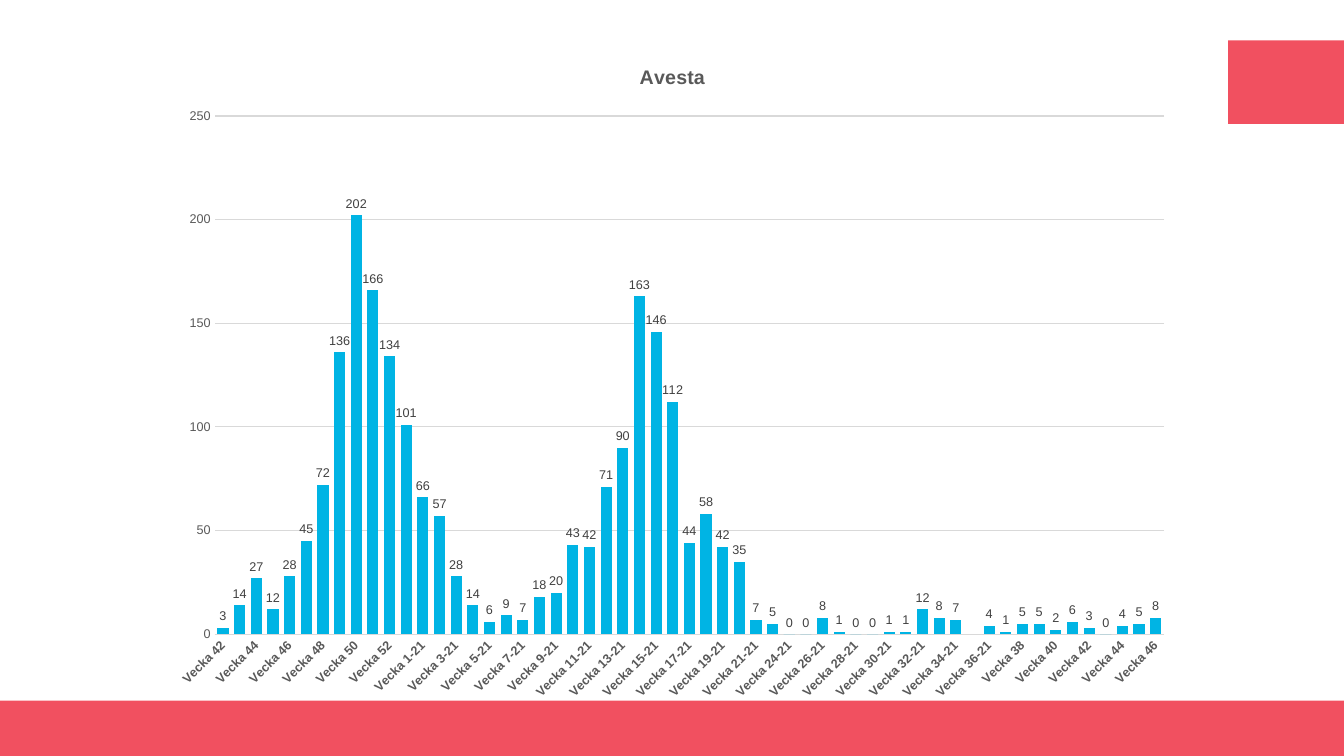
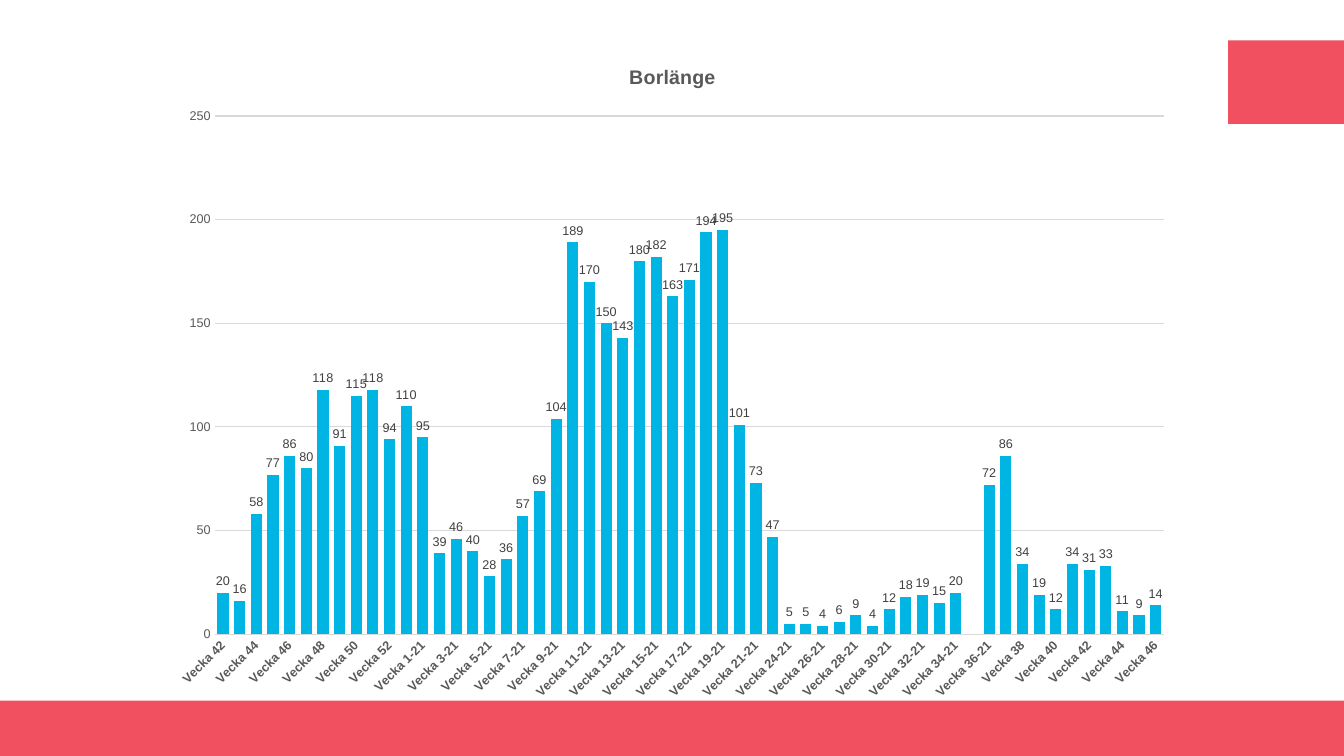
from dataclasses import dataclass

from lxml import etree
from pptx import Presentation
from pptx.chart.data import CategoryChartData
from pptx.dml.color import RGBColor
from pptx.enum.chart import XL_CHART_TYPE as ChartType
from pptx.enum.chart import XL_LABEL_POSITION as LabelPosition
from pptx.enum.chart import XL_TICK_MARK as TickMark
from pptx.enum.shapes import MSO_SHAPE as Preset
from pptx.oxml import parse_xml
from pptx.oxml.ns import nsdecls, qn
from pptx.util import Inches, Pt


@dataclass(frozen=True)
class Theme:
    font: str = "Arial"
    band: str = "F15060"
    bar: str = "00B4E4"
    rule: str = "D9D9D9"
    muted: str = "595959"
    value: str = "404040"
    title_size: float = 14
    base_size: float = 10
    label_size: float = 9


WEEKS = (
    [f"Vecka {week}" for week in range(42, 54)]
    + [f"Vecka {week}-21" for week in range(1, 37) if week != 23]
    + [f"Vecka {week}" for week in range(37, 47)]
)

CASES = {
    "Avesta": [
        3, 14, 27, 12, 28, 45, 72, 136, 202, 166, 134, 101,
        66, 57, 28, 14, 6, 9, 7, 18, 20, 43, 42, 71, 90, 163, 146, 112,
        44, 58, 42, 35, 7, 5, 0, 0, 8, 1, 0, 0, 1, 1, 12, 8, 7, None, 4,
        1, 5, 5, 2, 6, 3, 0, 4, 5, 8,
    ],
    "Borlänge": [
        20, 16, 58, 77, 86, 80, 118, 91, 115, 118, 94, 110,
        95, 39, 46, 40, 28, 36, 57, 69, 104, 189, 170, 150, 143, 180, 182, 163,
        171, 194, 195, 101, 73, 47, 5, 5, 4, 6, 9, 4, 12, 18, 19, 15, 20, None, 72,
        86, 34, 19, 12, 34, 31, 33, 11, 9, 14,
    ],
}


def style_font(font, theme, size, color, bold=False):
    font.name = theme.font
    font.size = Pt(size)
    font.bold = bold
    font.color.rgb = RGBColor.from_string(color)


def write_text(frame, text, **style):
    frame.text = text
    style_font(frame.paragraphs[0].runs[0].font, **style)


def style_line(line, color, width=0.75):
    line.color.rgb = RGBColor.from_string(color)
    line.width = Pt(width)


def manual_layout(target, **fractions):
    """Place a chart part by fractions of the chart's size."""
    for old in target.findall(qn("c:layout")):
        target.remove(old)
    layout = parse_xml(f"<c:layout {nsdecls('c')}><c:manualLayout/></c:layout>")
    for tag, value in fractions.items():
        etree.SubElement(layout[0], qn(f"c:{tag}")).set("val", str(value))
    return layout


class Deck:
    def __init__(self, theme):
        self.theme = theme
        self.prs = Presentation()
        self.prs.slide_width = Inches(13.33)
        self.prs.slide_height = Inches(7.5)
        self.layout = self.prs.slide_layouts[6]
        self.slide = None

    def add_slide(self):
        self.slide = self.prs.slides.add_slide(self.layout)

    def layout_band(self, left, top, width, height):
        """Draw a band and move it to the layout that all slides share."""
        band = self.slide.shapes.add_shape(
            Preset.RECTANGLE, Inches(left), Inches(top), Inches(width), Inches(height)
        )
        band.shadow.inherit = False
        band.fill.solid()
        band.fill.fore_color.rgb = RGBColor.from_string(self.theme.band)
        band.line.fill.background()
        self.layout.shapes.element.append(band.element)

    def weekly_chart(self, town, cases):
        theme = self.theme
        data = CategoryChartData()
        data.categories = WEEKS
        data.add_series("Series 1", cases)
        chart = self.slide.shapes.add_chart(
            ChartType.COLUMN_CLUSTERED,
            Inches(1.58), Inches(0.42), Inches(10.18), Inches(6.65), data,
        ).chart
        style_font(chart.font, theme, theme.base_size, "000000")
        chart.has_legend = False
        chart.has_title = True
        write_text(chart.chart_title.text_frame, town, theme=theme,
                   size=theme.title_size, color=theme.muted, bold=True)
        self.style_columns(chart.plots[0])
        self.style_axes(chart)
        self.place_parts(chart)

    def style_columns(self, plot):
        theme = self.theme
        plot.gap_width = 50
        plot.overlap = -27
        plot.vary_by_categories = False
        bars = plot.series[0]
        bars.invert_if_negative = False
        bars.format.fill.solid()
        bars.format.fill.fore_color.rgb = RGBColor.from_string(theme.bar)
        plot.has_data_labels = True
        labels = plot.data_labels
        labels.show_value = True
        labels.position = LabelPosition.OUTSIDE_END
        style_font(labels.font, theme, theme.label_size, theme.value)

    def style_axes(self, chart):
        theme = self.theme
        weeks, counts = chart.category_axis, chart.value_axis
        for axis in (weeks, counts):
            axis.major_tick_mark = axis.minor_tick_mark = TickMark.NONE
            style_font(axis.tick_labels.font, theme, theme.label_size,
                       theme.muted, bold=axis is weeks)
        style_line(weeks.format.line, theme.rule)
        counts.format.line.fill.background()
        counts.minimum_scale, counts.maximum_scale, counts.major_unit = 0, 250, 50
        counts.has_major_gridlines = True
        style_line(counts.major_gridlines.format.line, theme.rule)

    def place_parts(self, chart):
        """Slant the week labels, fix the plot area and clear the background."""
        space = chart.element
        slant = space.xpath("c:chart/c:plotArea/c:catAx/c:txPr/a:bodyPr")[0]
        slant.set("rot", "-2700000")
        slant.set("vert", "horz")
        plot_area = space.xpath("c:chart/c:plotArea")[0]
        plot_area.insert(0, manual_layout(
            plot_area, layoutTarget="inner", xMode="edge", yMode="edge",
            x=0.054, y=0.11, w=0.925, h=0.773,
        ))
        space.xpath("c:txPr")[0].addprevious(parse_xml(
            f"<c:spPr {nsdecls('c', 'a')}><a:noFill/><a:ln><a:noFill/></a:ln></c:spPr>"
        ))


def main():
    deck = Deck(Theme())
    for town, cases in CASES.items():
        deck.add_slide()
        if len(deck.prs.slides) == 1:
            deck.layout_band(0, 6.95, 13.33, 0.55)
            deck.layout_band(12.18, 0.4, 1.15, 0.83)
        deck.weekly_chart(town, cases)
    deck.prs.save("out.pptx")


if __name__ == "__main__":
    main()
